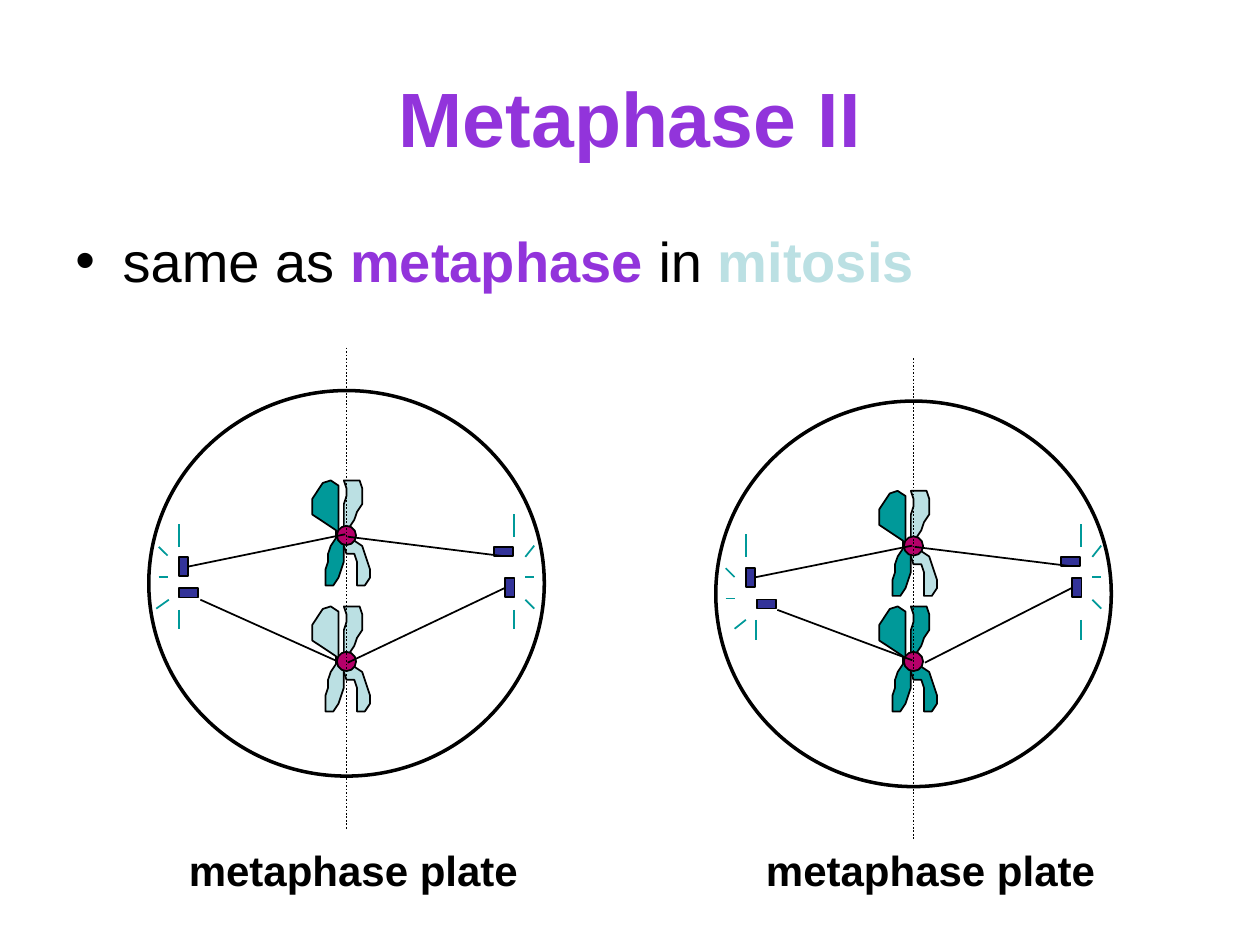
"""Build the Metaphase II slide: two dividing cells with their metaphase plates."""
from dataclasses import dataclass
from typing import Any, NamedTuple, Optional

from lxml import etree
from pptx import Presentation
from pptx import util as u
from pptx.dml.color import RGBColor
from pptx.enum import dml, shapes, text
from pptx.oxml.ns import qn


@dataclass(frozen=True)
class Theme:
    font: str = "Arial"
    ink: str = "000000"
    violet: str = "9234DB"
    pale: str = "BBE0E3"
    teal: str = "009999"
    centromere: str = "B50069"
    centriole: str = "333399"
    title_size: float = 44
    body_size: float = 32
    label_size: float = 24
    thin: float = 1
    thick: float = 2


class Point(NamedTuple):
    x: float
    y: float


class Ray(NamedTuple):
    start: Point
    end: Point


class Box(NamedTuple):
    left: float
    top: float
    width: float
    height: float


class Run(NamedTuple):
    words: str
    color: str
    bold: bool


class Chromosome(NamedTuple):
    y: float
    left_color: str
    right_color: str


class Spindle(NamedTuple):
    pole: Point
    centromere: Point
    centriole: int = 0
    site: Optional[int] = None


@dataclass(frozen=True)
class Cell:
    """A cell with x measured from its plate and y from the slide top."""
    plate: float
    top: float
    label_left: float
    chromosomes: tuple[Chromosome, ...]
    centrioles: tuple[Box, ...]
    rays: tuple[Ray, ...]
    spindles: tuple[Spindle, ...]


THEME = Theme()
TOP, LEFT, BOTTOM, RIGHT = range(4)
GRID = 1.5
LEFT_CHROMATID = ((0, 0), (-3, -1), (-3, -19), (-6, -21), (-9, -20), (-13, -14), (-13, -8),
                  (-10, -6), (-4, -2), (-4, 1), (-6, 4), (-7, 7), (-7, 10), (-8, 13), (-8, 19),
                  (-5, 19), (-3, 16), (-1, 10), (-1, 1))
RIGHT_CHROMATID = ((0, 0), (-1, -3), (-1, -12), (0, -15), (0, -18), (-1, -21), (5, -21), (6, -18),
                   (6, -12), (4, -9), (3, -6), (1, -3), (0, 0), (6, 4), (9, 13), (9, 16),
                   (7, 19), (4, 19), (4, 10), (3, 7), (0, 7), (-1, 4), (-1, 1))


def upright(left: float, top: float) -> Box:
    return Box(left, top, 5.3, 10.8)


def flat(left: float, top: float) -> Box:
    return Box(left, top, 10.8, 5.3)


def ray(x1: float, y1: float, x2: float, y2: float) -> Ray:
    return Ray(Point(x1, y1), Point(x2, y2))


SIDE_RAYS = (ray(102.2, 318.2, 107.3, 311.8), ray(102.2, 329.8, 107.3, 329.8),
             ray(102.2, 342.7, 107.3, 347.8))
CELLS = (
    Cell(198, 223.2, 100.8,
         (Chromosome(378, THEME.pale, THEME.pale), Chromosome(306, THEME.teal, THEME.pale)),
         (upright(-95.8, 318.4), flat(-95.8, 336.2), upright(90.7, 330.5), flat(84.2, 312.5)),
         SIDE_RAYS + (ray(95.8, 306.7, 95.8, 293.8), ray(95.8, 348.5, 95.8, 359.3),
                      ray(-101.5, 342.7, -108.7, 347.8), ray(-107.3, 329.8, -102.2, 329.8),
                      ray(-107.3, 312.5, -102.2, 317.5), ray(-95.8, 312.5, -95.8, 299.5),
                      ray(-95.8, 348.5, -95.8, 359.3)),
         (Spindle(Point(-89.3, 324.7), Point(-0.7, 305.3), 0, RIGHT),
          Spindle(Point(-83.5, 342.7), Point(-6.5, 377.3)),
          Spindle(Point(89.3, 317.5), Point(0.7, 306.7), 3, BOTTOM),
          Spindle(Point(89.3, 335.5), Point(0.7, 378.7), 2, LEFT))),
    Cell(522, 229.2, 430.6,
         (Chromosome(312, THEME.teal, THEME.pale), Chromosome(378, THEME.teal, THEME.teal)),
         (upright(-95.8, 324.5), flat(-89.3, 342.5), upright(90.7, 330.5), flat(84.2, 318.2)),
         SIDE_RAYS + (ray(95.8, 312.5, 95.8, 299.5), ray(95.8, 354.2, 95.8, 365.8),
                      ray(-95.8, 354.2, -102.2, 359.3), ray(-107.3, 342, -102.2, 342),
                      ray(-107.3, 324.7, -102.2, 329.8), ray(-95.8, 318.2, -95.8, 305.3),
                      ray(-90, 354.2, -90, 365.8)),
         (Spindle(Point(-89.3, 330.5), Point(-0.7, 311.8), 0, RIGHT),
          Spindle(Point(-77.8, 348.5), Point(-0.7, 377.3)),
          Spindle(Point(89.3, 323.3), Point(0.7, 312.5), 3, BOTTOM),
          Spindle(Point(89.3, 335.5), Point(6.5, 378.7), 2, LEFT))),
)


def apply(target: Any, **values: Any) -> None:
    for name, value in values.items():
        setattr(target, name, value)


def finish(part: Any, fill: Optional[str], width: float = THEME.thin) -> Any:
    part.shadow.inherit = False
    if fill:
        part.fill.solid()
        part.fill.fore_color.rgb = RGBColor.from_string(fill)
    else:
        part.fill.background()
    part.line.color.rgb = RGBColor.from_string(THEME.ink)
    part.line.width = u.Pt(width)
    return part


def draw_preset(slide: Any, kind: Any, box: Box, fill: Optional[str],
                width: float = THEME.thin) -> Any:
    return finish(slide.shapes.add_shape(kind, *map(u.Pt, box)), fill, width)


def draw_line(slide: Any, plate: float, stretch: Ray, color: str = THEME.ink,
              dash: Any = None) -> Any:
    (x1, y1), (x2, y2) = stretch
    line = slide.shapes.add_connector(shapes.MSO_CONNECTOR.STRAIGHT,
                                      *map(u.Pt, (plate + x1, y1, plate + x2, y2)))
    line.line.color.rgb = RGBColor.from_string(color)
    apply(line.line, width=u.Pt(THEME.thin), dash_style=dash)
    etree.SubElement(line._element.spPr, qn("a:effectLst"))
    return line


def draw_chromosome(slide: Any, plate: float, chromosome: Chromosome) -> None:
    y, left_color, right_color = chromosome
    for outline, color in ((LEFT_CHROMATID, left_color), (RIGHT_CHROMATID, right_color)):
        chromatid = slide.shapes.build_freeform(*outline[0], scale=u.Pt(GRID))
        chromatid.add_line_segments(outline[1:], close=True)
        finish(chromatid.convert_to_shape(u.Pt(plate), u.Pt(y)), color)
    draw_preset(slide, shapes.MSO_SHAPE.OVAL, Box(plate - 5.5, y - 5.5, 11, 11), THEME.centromere)


def draw_cell(slide: Any, cell: Cell) -> None:
    for chromosome in cell.chromosomes:
        draw_chromosome(slide, cell.plate, chromosome)
    draw_preset(slide, shapes.MSO_SHAPE.OVAL, Box(cell.plate - 113, cell.top, 226, 220.3),
                None, THEME.thick)
    centrioles = [draw_preset(slide, shapes.MSO_SHAPE.RECTANGLE,
                              box._replace(left=cell.plate + box.left), THEME.centriole)
                  for box in cell.centrioles]
    for stretch in cell.rays:
        draw_line(slide, cell.plate, stretch, THEME.teal)
    draw_line(slide, cell.plate, ray(0, cell.top - 24.5, 0, cell.top + 250.5),
              dash=dml.MSO_LINE.ROUND_DOT)
    for spindle in cell.spindles:
        fibre = draw_line(slide, cell.plate, Ray(spindle.pole, spindle.centromere))
        if spindle.site is not None:
            fibre.begin_connect(centrioles[spindle.centriole], spindle.site)
    write(slide, Box(cell.label_left, 478.8, 202.3, 36),
          (Run("metaphase plate", THEME.ink, True),), THEME.label_size, wrap=False)


def write(slide: Any, box: Box, runs: tuple[Run, ...], size: float, wrap: bool = True,
          anchor: Any = text.MSO_ANCHOR.TOP, align: Any = text.PP_ALIGN.LEFT) -> Any:
    frame = slide.shapes.add_textbox(*map(u.Pt, box)).text_frame
    apply(frame, word_wrap=wrap, vertical_anchor=anchor)
    paragraph = frame.paragraphs[0]
    paragraph.alignment = align
    for words, color, bold in runs:
        run = paragraph.add_run()
        run.text = words
        apply(run.font, name=THEME.font, size=u.Pt(size), bold=bold)
        run.font.color.rgb = RGBColor.from_string(color)
    return paragraph


def main() -> None:
    deck = Presentation()
    apply(deck, slide_width=u.Pt(720), slide_height=u.Pt(540))
    slide = deck.slides.add_slide(deck.slide_layouts[6])
    write(slide, Box(36, 21.6, 648, 90), (Run("Metaphase II", THEME.violet, True),),
          THEME.title_size, anchor=text.MSO_ANCHOR.MIDDLE, align=text.PP_ALIGN.CENTER)
    point = write(slide, Box(36, 126, 648, 356.4),
                  (Run("same as ", THEME.ink, False), Run("metaphase", THEME.violet, True),
                   Run(" in ", THEME.ink, False), Run("mitosis", THEME.pale, True)),
                  THEME.body_size)
    point.space_before = u.Pt(6.4)
    properties = point._p.get_or_add_pPr()
    for name, value in {"marL": u.Pt(27), "indent": u.Pt(-27)}.items():
        properties.set(name, str(int(value)))
    etree.SubElement(properties, qn("a:buFont"), typeface=THEME.font)
    etree.SubElement(properties, qn("a:buChar"), char="•")
    for cell in CELLS:
        draw_cell(slide, cell)
    deck.save("out.pptx")


if __name__ == "__main__":
    main()
